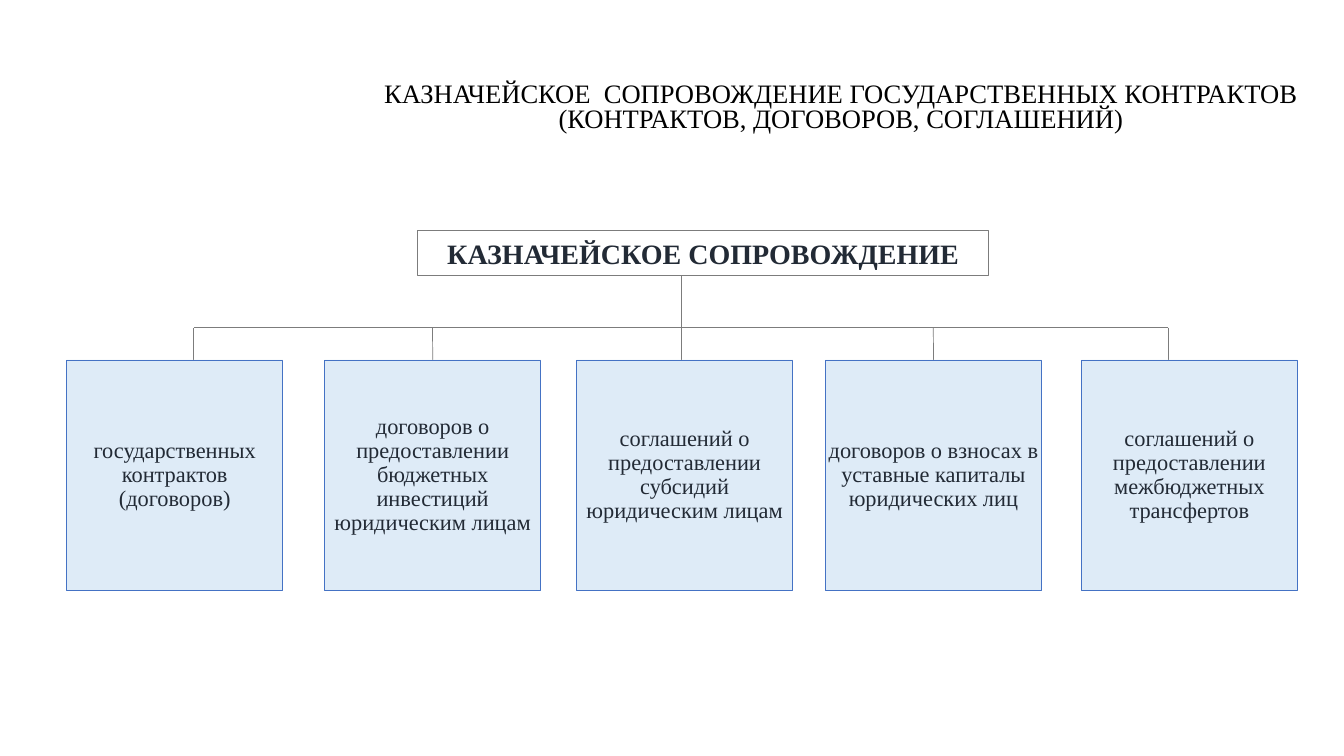
from dataclasses import dataclass

from lxml.etree import SubElement
from pptx import Presentation
from pptx.dml.color import RGBColor
from pptx.enum.shapes import MSO_CONNECTOR, MSO_SHAPE
from pptx.enum.text import MSO_ANCHOR, PP_ALIGN
from pptx.oxml.ns import qn
from pptx.util import Cm, Pt


@dataclass(frozen=True)
class Theme:
    face: str = "Times New Roman"
    black: RGBColor = RGBColor(0x00, 0x00, 0x00)
    ink: RGBColor = RGBColor(0x22, 0x2A, 0x35)
    gray: RGBColor = RGBColor(0x7C, 0x7C, 0x7C)
    blue: RGBColor = RGBColor(0x44, 0x72, 0xC4)
    pale: RGBColor = RGBColor(0xDE, 0xEB, 0xF7)
    title: Pt = Pt(19)
    head: Pt = Pt(20)
    body: Pt = Pt(16)
    thin: Pt = Pt(0.5)
    edge: Pt = Pt(0.75)


THEME = Theme()
TITLE = (
    "КАЗНАЧЕЙСКОЕ  СОПРОВОЖДЕНИЕ ГОСУДАРСТВЕННЫХ КОНТРАКТОВ",
    "(КОНТРАКТОВ, ДОГОВОРОВ, СОГЛАШЕНИЙ)",
)
HEAD = "КАЗНАЧЕЙСКОЕ СОПРОВОЖДЕНИЕ"
# Left edge of each box, centre of its branch line, wording (cm)
KINDS = (
    (1.68, 4.88, "государственных контрактов (договоров)"),
    (8.18, 10.9, "договоров о предоставлении бюджетных инвестиций юридическим лицам"),
    (14.53, 17.17, "соглашений о предоставлении субсидий юридическим лицам"),
    (20.8, 23.52, "договоров о взносах в уставные капиталы юридических лиц"),
    (27.25, 29.44, "соглашений о предоставлении межбюджетных трансфертов"),
)
BOX_TOP, BOX_WIDE, BOX_HIGH = 9.07, 5.45, 5.82
HEAD_END, RAIL = 6.94, 8.26


def put(item, values):
    for name, value in values.items():
        setattr(item, name, value)


def write(frame, lines, font, layout, margin=None):
    frame.word_wrap = True
    if margin is not None:
        sides = ("left", "top", "right", "bottom")
        put(frame, {f"margin_{side}": margin for side in sides})
    for index, line in enumerate(lines):
        para = frame.paragraphs[0] if index == 0 else frame.add_paragraph()
        put(para, {"alignment": PP_ALIGN.CENTER, **layout})
        run = para.add_run()
        run.text = line
        put(run.font, {"name": THEME.face, "size": font["size"], "bold": font.get("bold")})
        run.font.color.rgb = font["color"]


def add_box(slide, place, line, width, fill=None):
    box = slide.shapes.add_shape(MSO_SHAPE.RECTANGLE, *map(Cm, place))
    box.shadow.inherit = False
    if fill is None:
        box.fill.background()
    else:
        box.fill.solid()
        box.fill.fore_color.rgb = fill
    box.line.color.rgb = line
    box.line.width = width
    box.text_frame.vertical_anchor = MSO_ANCHOR.MIDDLE
    return box


def add_line(slide, *ends):
    line = slide.shapes.add_connector(MSO_CONNECTOR.STRAIGHT, *map(Cm, ends))
    line.line.color.rgb = THEME.gray
    line.line.width = THEME.thin
    SubElement(line.element.spPr, qn("a:effectLst"))
    return line


def add_title(slide):
    box = slide.shapes.add_textbox(Cm(8.53), Cm(1.98), Cm(25.32), Cm(1.55))
    font = {"size": THEME.title, "color": THEME.black}
    write(box.text_frame, TITLE, font, {"line_spacing": Pt(18)})


def add_head(slide):
    box = add_box(slide, (10.52, 5.82, 14.4, 1.12), THEME.gray, THEME.edge)
    font = {"size": THEME.head, "color": THEME.ink, "bold": True}
    write(box.text_frame, [HEAD], font, {})


def add_kind(slide, left, branch, text):
    """Draw a box and its branch, joined where the branch meets the middle."""
    line = add_line(slide, branch, RAIL, branch, BOX_TOP)
    place = left, BOX_TOP, BOX_WIDE, BOX_HIGH
    box = add_box(slide, place, THEME.blue, THEME.thin, THEME.pale)
    font = {"size": THEME.body, "color": THEME.ink}
    layout = {"line_spacing": 0.9, "space_after": Pt(5.6)}
    write(box.text_frame, [text], font, layout, Cm(0.03))
    if abs(left + BOX_WIDE / 2 - branch) < 0.05:
        line.end_connect(box, 0)


def main():
    deck = Presentation()
    put(deck, {"slide_width": Cm(33.87), "slide_height": Cm(19.05)})
    slide = deck.slides.add_slide(deck.slide_layouts[6])
    branches = [branch for _, branch, _ in KINDS]
    trunk = branches[len(branches) // 2]
    add_line(slide, trunk, HEAD_END, trunk, RAIL)
    add_line(slide, branches[-1], RAIL, branches[0], RAIL)
    add_title(slide)
    add_head(slide)
    for kind in KINDS:
        add_kind(slide, *kind)
    deck.save("out.pptx")


if __name__ == "__main__":
    main()
